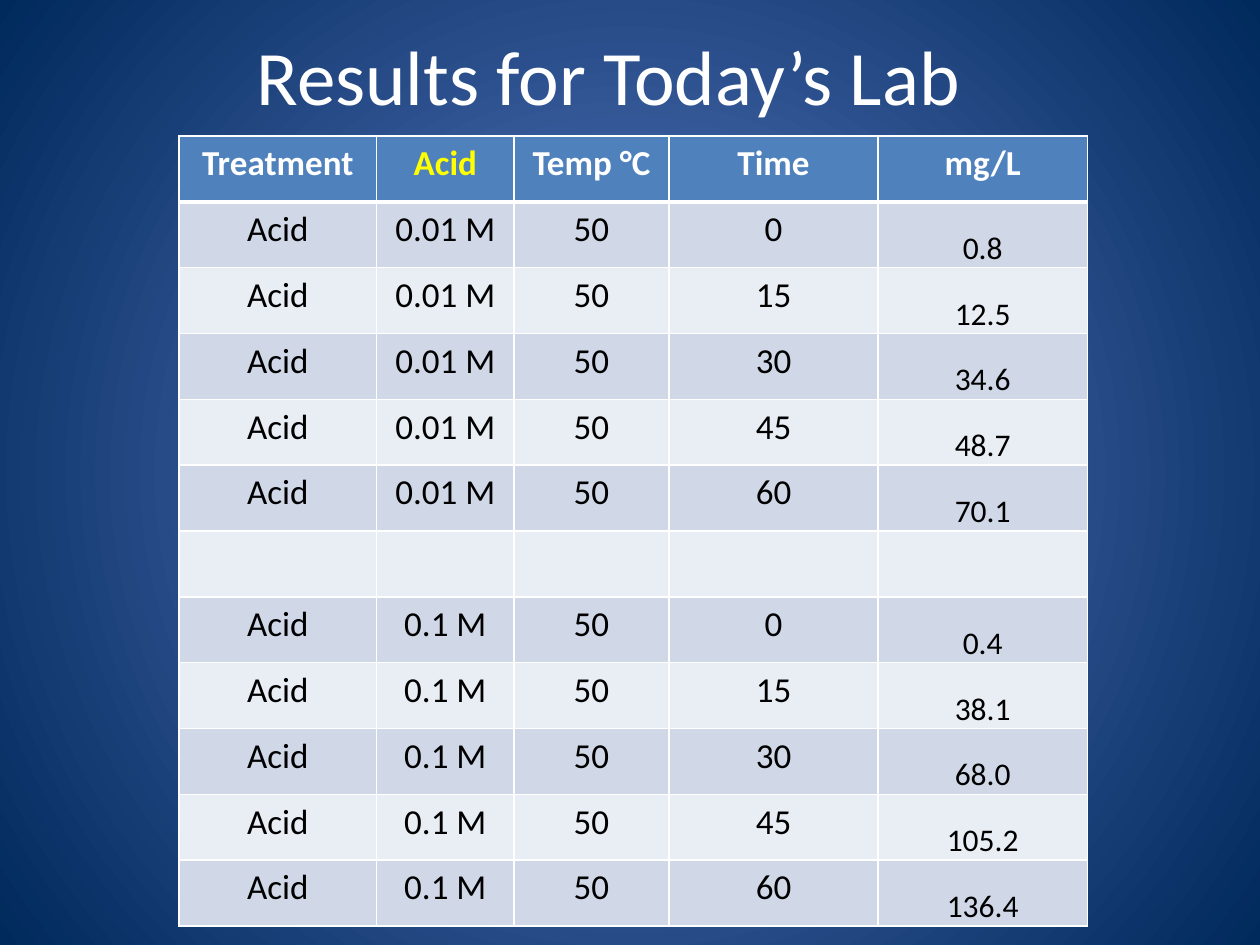
import dataclasses

import lxml.etree
import pptx
import pptx.dml.color
import pptx.enum.text
import pptx.oxml
import pptx.oxml.ns
import pptx.util

Inches = pptx.util.Inches
Anchor = pptx.enum.text.MSO_ANCHOR

FONT = "Calibri"
WHITE, BLACK, YELLOW = "FFFFFF", "000000", "FFFF00"
HEADER_FILL = "4F81BD"
BAND_FILLS = ("D0D8E8", "E9EDF4")
BACKGROUND_CENTRE, BACKGROUND_EDGE = "5E7CC5", "00295C"

HEADINGS = ("Treatment", "Acid", "Temp °C", "Time", "mg/L")
COLUMN_WIDTHS = (1.57, 1.09, 1.23, 1.66, 1.66)
ROW_HEIGHT = 6.27 / 12
TEMPERATURE = "50"
TIMES = ("0", "15", "30", "45", "60")


@dataclasses.dataclass
class Series:
    """Readings at each time for one acid concentration."""
    concentration: str
    readings: tuple[str, ...]

    def rows(self) -> list[tuple[str, ...]]:
        return [("Acid", self.concentration, TEMPERATURE, time, reading)
                for time, reading in zip(TIMES, self.readings)]


WEAK = Series("0.01 M", ("0.8", "12.5", "34.6", "48.7", "70.1"))
STRONG = Series("0.1 M", ("0.4", "38.1", "68.0", "105.2", "136.4"))


def colour(value: str) -> pptx.dml.color.RGBColor:
    return pptx.dml.color.RGBColor.from_string(value)


def write(frame, text: str, *, size: float, fill: str, bold: bool = False) -> None:
    """Put one centred line of text into a text frame."""
    para = frame.paragraphs[0]
    para.alignment = pptx.enum.text.PP_ALIGN.CENTER
    span = para.add_run()
    span.text = text
    span.font.name = FONT
    span.font.size = pptx.util.Pt(size)
    span.font.bold = bold
    span.font.color.rgb = colour(fill)


def paint_background(page) -> None:
    """Fill the page with a circular gradient around its centre."""
    fill = page.background.fill
    fill.gradient()
    stops = zip(fill.gradient_stops, (0, 1), (BACKGROUND_CENTRE, BACKGROUND_EDGE))
    for stop, position, value in stops:
        stop.position = position
        stop.color.rgb = colour(value)
    linear = next(page.element.iter(pptx.oxml.ns.qn("a:lin")))
    circle = pptx.oxml.parse_xml(
        f'<a:path {pptx.oxml.ns.nsdecls("a")} path="circle">'
        '<a:fillToRect l="50000" t="50000" r="50000" b="50000"/></a:path>')
    linear.getparent().replace(linear, circle)


def style_cell(cell, fill: str, top: float, bottom: float) -> None:
    """Set white borders, with widths in points, and the cell's fill."""
    properties = cell._tc.get_or_add_tcPr()
    for side, width in (("L", 1), ("R", 1), ("T", top), ("B", bottom)):
        line = lxml.etree.SubElement(
            properties, pptx.oxml.ns.qn(f"a:ln{side}"), w=str(pptx.util.Pt(width)))
        solid = lxml.etree.SubElement(line, pptx.oxml.ns.qn("a:solidFill"))
        lxml.etree.SubElement(solid, pptx.oxml.ns.qn("a:srgbClr"), val=WHITE)
    cell.fill.solid()
    cell.fill.fore_color.rgb = colour(fill)


def add_title(page, text: str) -> None:
    box = page.shapes.add_textbox(Inches(0.33), Inches(-0.03), Inches(9), Inches(1.25))
    box.text_frame.word_wrap = True
    box.text_frame.vertical_anchor = Anchor.MIDDLE
    write(box.text_frame, text, size=44, fill=WHITE)


def add_results(page) -> None:
    blank_row = ("",) * len(HEADINGS)
    rows = [HEADINGS, *WEAK.rows(), blank_row, *STRONG.rows()]
    table = page.shapes.add_table(
        len(rows), len(HEADINGS), Inches(1.42), Inches(1.08),
        Inches(sum(COLUMN_WIDTHS)), Inches(ROW_HEIGHT * len(rows))).table
    table.horz_banding = False
    for column, width in zip(table.columns, COLUMN_WIDTHS):
        column.width = Inches(width)

    for row_index, texts in enumerate(rows):
        table.rows[row_index].height = Inches(ROW_HEIGHT)
        header = row_index == 0
        fill = HEADER_FILL if header else BAND_FILLS[(row_index - 1) % 2]
        for column_index, text in enumerate(texts):
            cell = table.cell(row_index, column_index)
            style_cell(cell, fill, top=3 if row_index == 1 else 1,
                       bottom=3 if header else 1)
            if not text:
                continue
            if header:
                ink = YELLOW if text == "Acid" else WHITE
                write(cell.text_frame, text, size=20, fill=ink, bold=True)
            elif HEADINGS[column_index] == "mg/L":
                cell.vertical_anchor = Anchor.BOTTOM
                cell.margin_left = cell.margin_right = cell.margin_top = Inches(0.01)
                cell.margin_bottom = 0
                write(cell.text_frame, text, size=18, fill=BLACK)
            else:
                write(cell.text_frame, text, size=20, fill=BLACK)


def main() -> None:
    deck = pptx.Presentation()
    deck.slide_width, deck.slide_height = Inches(10), Inches(7.5)
    page = deck.slides.add_slide(deck.slide_layouts[6])
    paint_background(page)
    add_title(page, "Results for Today’s Lab")
    add_results(page)
    deck.save("out.pptx")


if __name__ == "__main__":
    main()
